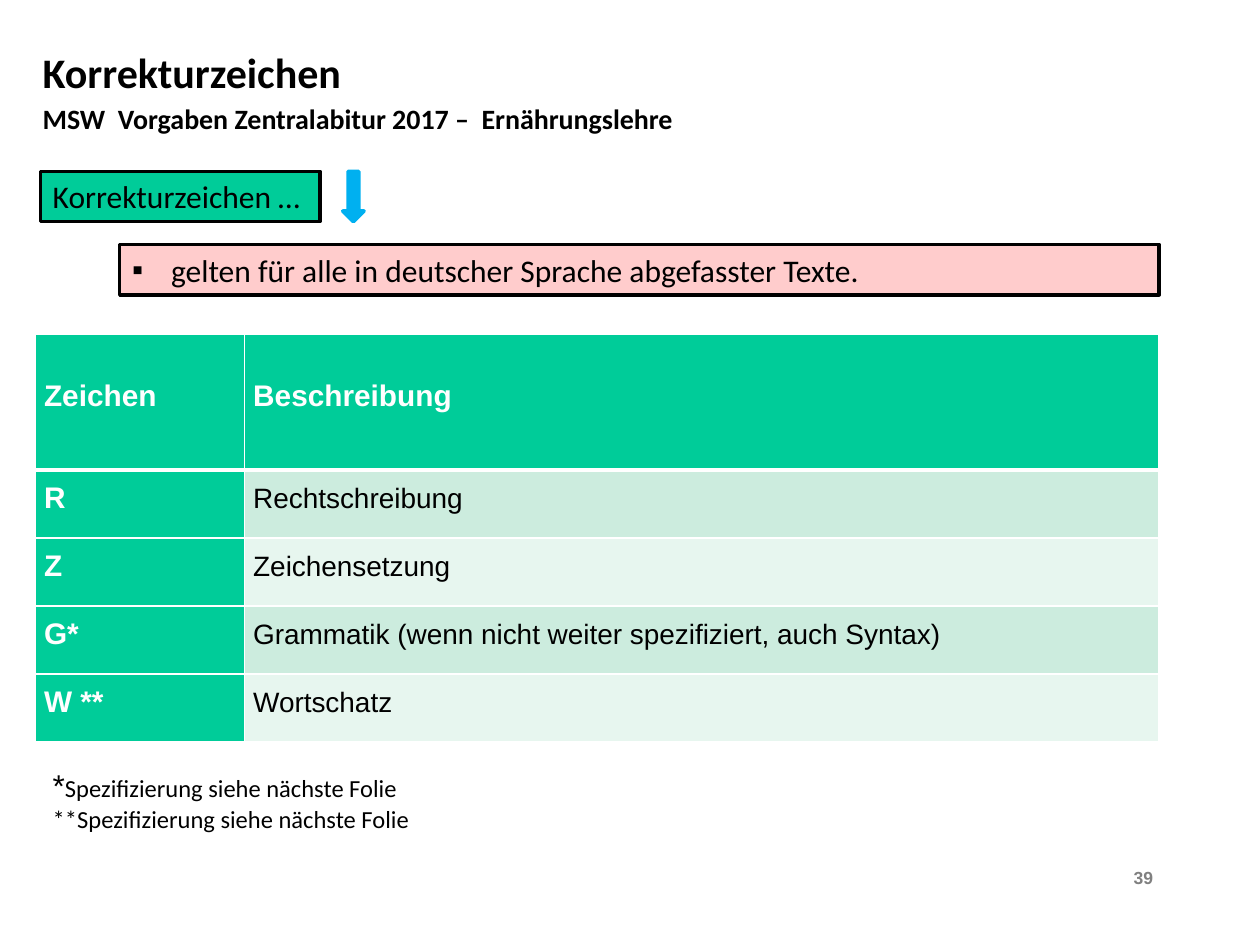
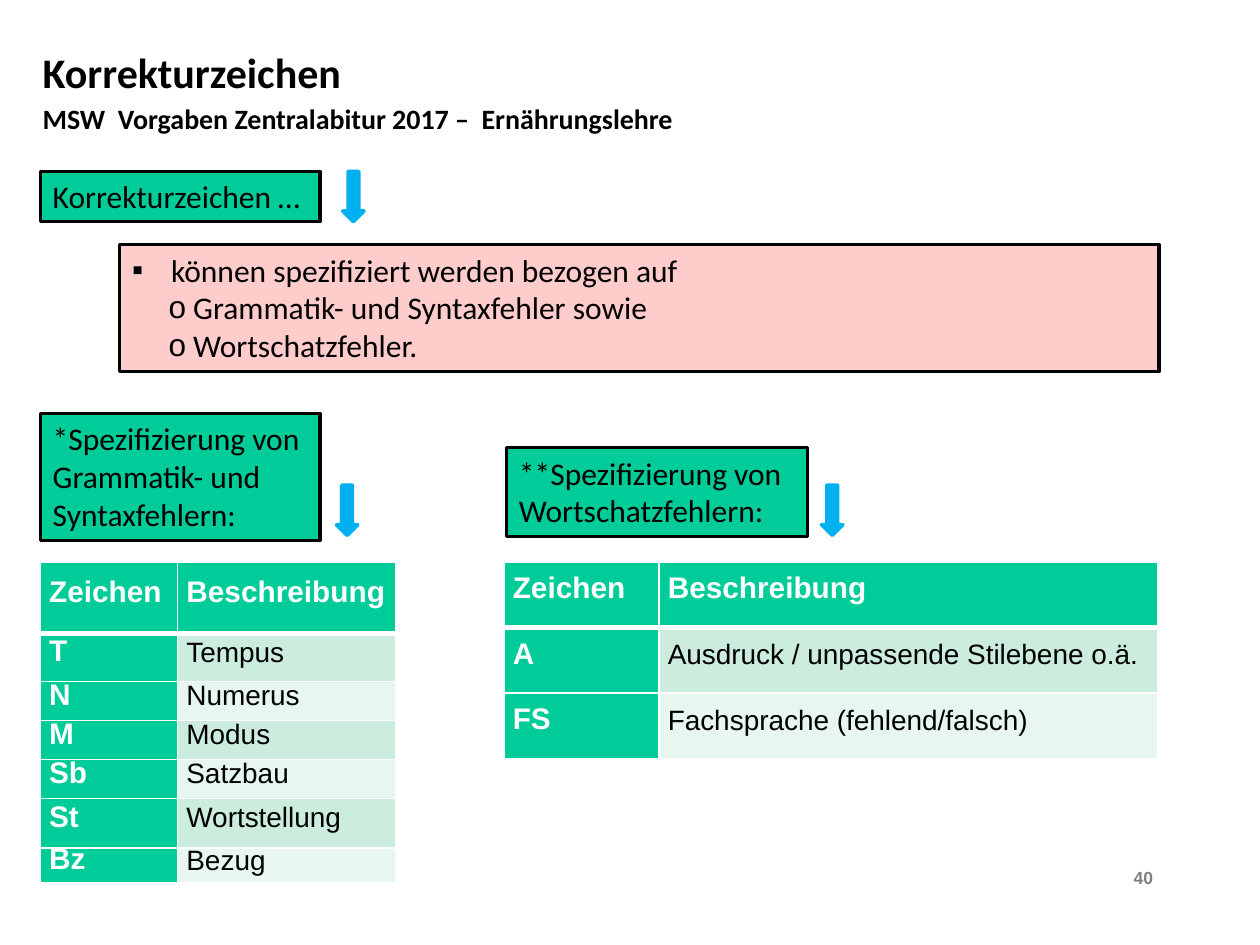
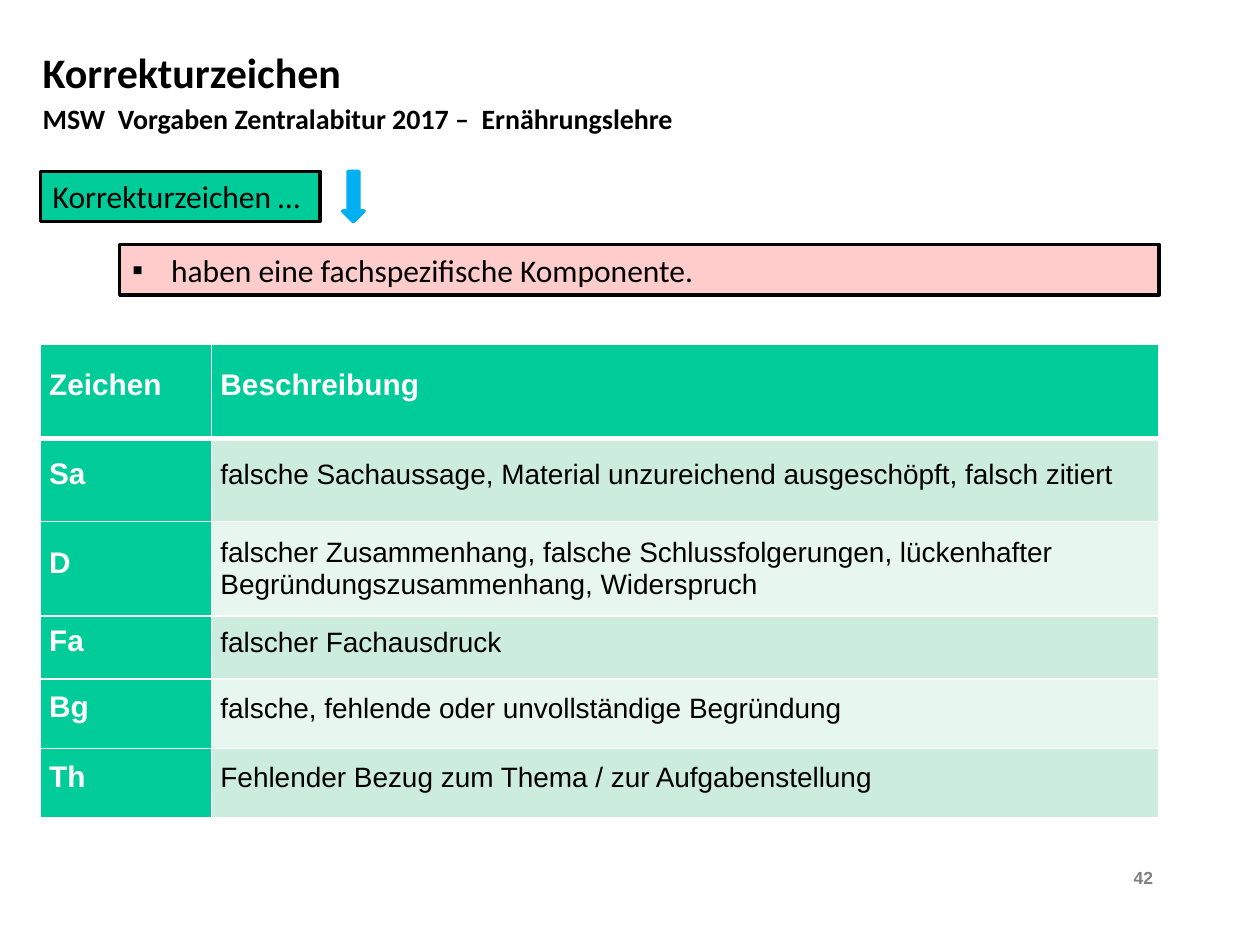
from dataclasses import dataclass, field

from lxml.etree import SubElement
from pptx import Presentation
from pptx.dml.color import RGBColor
from pptx.enum.shapes import MSO_SHAPE
from pptx.enum.text import MSO_ANCHOR, MSO_AUTO_SIZE, PP_ALIGN
from pptx.oxml.ns import qn
from pptx.util import Inches, Pt


@dataclass
class Theme:
    green: str = "00CC99"
    pink: str = "FFCCCC"
    blue: str = "00B0F0"
    black: str = "000000"
    white: str = "FFFFFF"
    bands: tuple = ("CCECDE", "E7F6EF")
    outline: float = 2
    cell_line: int = 1
    header_line: int = 3
    # Text styles: font, size, bold, colour
    styles: dict = field(default_factory=lambda: {
        "title": ("Calibri", 24, True, "000000"),
        "subtitle": ("Calibri", 16, True, "000000"),
        "body": ("Calibri", 18, False, "000000"),
        "note": ("Calibri", 14, False, "000000"),
        "star": ("Arial", 18, False, "000000"),
        "number": ("Arial", 10, True, "808080"),
        "sign": ("Arial", 17, True, "FFFFFF"),
        "meaning": ("Arial", 16, False, "000000"),
    })


theme = Theme()
presentation = Presentation()
presentation.slide_width, presentation.slide_height = Inches(10), Inches(7.5)

# Grid of 100 columns and 75 rows
COLUMN = presentation.slide_width / 100
ROW = presentation.slide_height / 75
LEFT, RIGHT = 3.2, 92
LABEL_WIDTH, LINE_HEIGHT = 22.2, 4
ARROW_WIDTH = 1.7


def write(paragraph, runs):
    for text, style in runs:
        run = paragraph.add_run()
        run.text = text
        name, size, bold, colour = theme.styles[style]
        for key, value in {"name": name, "size": Pt(size), "bold": bold}.items():
            setattr(run.font, key, value)
        run.font.color.rgb = RGBColor.from_string(colour)


def add_box(slide, at, paragraphs, fill=None, line=theme.black, preset=MSO_SHAPE.RECTANGLE,
            bullets=(), align=PP_ALIGN.LEFT, anchor=MSO_ANCHOR.TOP):
    left, top, width, height = at
    place = [round(left * COLUMN), round(top * ROW), round(width * COLUMN), round(height * ROW)]
    if fill:
        shape = slide.shapes.add_shape(preset, *place)
        shape.shadow.inherit = False
        shape.fill.solid()
        shape.fill.fore_color.rgb = RGBColor.from_string(fill)
        shape.line.color.rgb = RGBColor.from_string(line)
        shape.line.width = Pt(theme.outline)
    else:
        shape = slide.shapes.add_textbox(*place)
    frame = shape.text_frame
    frame_format = {"word_wrap": True, "vertical_anchor": anchor, "auto_size": MSO_AUTO_SIZE.NONE}
    for key, value in frame_format.items():
        setattr(frame, key, value)
    for index, runs in enumerate(paragraphs):
        paragraph = frame.add_paragraph() if index else frame.paragraphs[0]
        paragraph.alignment = align
        if bullets:
            character, indent = bullets[min(index, len(bullets) - 1)]
            properties = paragraph._p.get_or_add_pPr()
            properties.set("marL", str(Inches(0.31)))
            properties.set("indent", str(Inches(indent)))
            SubElement(properties, qn("a:buFont")).set("typeface", "Arial")
            SubElement(properties, qn("a:buChar")).set("char", character)
        write(paragraph, runs)


# Tables: left, top, column widths, row heights, entries
signs = (2.8, 26.5, (16.6, 72.6), (10.8, 5.4, 5.4, 5.4, 5.4), [
    ("R", "Rechtschreibung"),
    ("Z", "Zeichensetzung"),
    ("G*", "Grammatik (wenn nicht weiter spezifiziert, auch Syntax)"),
    ("W **", "Wortschatz"),
])
grammar = (LEFT, 44.6, (10.9, 17.3), (5.7, 3.8, 3.1, 3.1, 3.1, 3.9, 2.8), [
    ("T", "Tempus"),
    ("N", "Numerus"),
    ("M", "Modus"),
    ("Sb", "Satzbau"),
    ("St", "Wortstellung"),
    ("Bz", "Bezug"),
])
vocabulary = (40, 44.6, (12.3, 39.6), (5.2, 5.2, 5.2), [
    ("A", "Ausdruck / unpassende Stilebene o.ä."),
    ("FS", "Fachsprache (fehlend/falsch)"),
])
subject = (LEFT, 27.3, (13.6, 75.2), (7.5, 6.6, 7.5, 5, 5.5, 5.5), [
    ("Sa", "falsche Sachaussage, Material unzureichend ausgeschöpft, falsch zitiert"),
    ("D", "falscher Zusammenhang, falsche Schlussfolgerungen, lückenhafter "
          "Begründungszusammenhang, Widerspruch"),
    ("Fa", "falscher Fachausdruck"),
    ("Bg", "falsche, fehlende oder unvollständige Begründung"),
    ("Th", "Fehlender Bezug zum Thema / zur Aufgabenstellung"),
])

# Labels: box, text, left and top of the arrow beside it
opening = ((LEFT, 13.6, LABEL_WIDTH, LINE_HEIGHT), "Korrekturzeichen …", (27.2, 13.6))
grammar_label = ((LEFT, 32.8, LABEL_WIDTH, 10.1),
                 "*Spezifizierung von Grammatik- und Syntaxfehlern:", (26.7, 38.5))
vocabulary_label = ((40.2, 35.5, 23.9, 7.1),
                    "**Spezifizierung von Wortschatzfehlern:", (65.2, 38.5))

# Slides: number, claims, height of the claim box, labels, tables, footnotes
slides = [
    ("39", ["gelten für alle in deutscher Sprache abgefasster Texte."], LINE_HEIGHT,
     [opening], [signs],
     [[("*", "star"), ("Spezifizierung siehe nächste Folie", "note")],
      [("**Spezifizierung siehe nächste Folie", "note")]]),
    ("40", ["können spezifiziert werden bezogen auf",
            " Grammatik- und Syntaxfehler sowie", " Wortschatzfehler."], 10.1,
     [opening, grammar_label, vocabulary_label], [grammar, vocabulary], []),
    ("42", ["haben eine fachspezifische Komponente."], LINE_HEIGHT,
     [opening], [subject], []),
]

for number, claims, claim_height, labels, tables, footnotes in slides:
    slide = presentation.slides.add_slide(presentation.slide_layouts[6])

    # Page number, title and subtitle
    add_box(slide, (79.2, 68.3, 13.3, 4.2), [[(number, "number")]], align=PP_ALIGN.RIGHT)
    add_box(slide, (2.4, 1.3, 60.6, 8.8), [[("Korrekturzeichen", "title")]],
            anchor=MSO_ANCHOR.MIDDLE)
    add_box(slide, (2.4, 7.6, 60, 3.7),
            [[("MSW  Vorgaben Zentralabitur 2017 –  Ernährungslehre", "subtitle")]])

    # Labels with their arrows
    for box, text, arrow in labels:
        add_box(slide, box, [[(text, "body")]], theme.green)
        add_box(slide, (*arrow, ARROW_WIDTH, LINE_HEIGHT), [], theme.blue, theme.blue,
                MSO_SHAPE.DOWN_ARROW)

    # Claim
    add_box(slide, (9.5, 19.4, RIGHT - 9.5, claim_height),
            [[(claim, "body")] for claim in claims], theme.pink,
            bullets=(("▪", -0.31), ("o", -0.02)))

    # Tables
    for left, top, widths, heights, entries in tables:
        table = slide.shapes.add_table(
            len(heights), len(widths), round(left * COLUMN), round(top * ROW),
            round(sum(widths) * COLUMN), round(sum(heights) * ROW)).table
        for column, width in zip(table.columns, widths):
            column.width = round(width * COLUMN)
        for row, height in zip(table.rows, heights):
            row.height = round(height * ROW)
        for row_index, entry in enumerate([("Zeichen", "Beschreibung"), *entries]):
            for column_index, text in enumerate(entry):
                cell = table.cell(row_index, column_index)
                cell_format = {"margin_left": Inches(0.07), "margin_right": Inches(0.07),
                               "margin_top": 0, "margin_bottom": 0,
                               "vertical_anchor": MSO_ANCHOR.MIDDLE}
                for key, value in cell_format.items():
                    setattr(cell, key, value)
                for side in ("L", "R", "T", "B"):
                    below_header = (row_index, side) in ((0, "B"), (1, "T"))
                    width = theme.header_line if below_header else theme.cell_line
                    border = SubElement(cell._tc.get_or_add_tcPr(), qn(f"a:ln{side}"),
                                        w=str(Pt(width)))
                    border_fill = SubElement(border, qn("a:solidFill"))
                    SubElement(border_fill, qn("a:srgbClr"), val=theme.white)
                is_sign = row_index == 0 or column_index == 0
                colour = theme.green if is_sign else theme.bands[(row_index - 1) % 2]
                cell.fill.solid()
                cell.fill.fore_color.rgb = RGBColor.from_string(colour)
                paragraph = cell.text_frame.paragraphs[0]
                if not text.startswith("falscher Zusammenhang"):
                    paragraph.line_spacing = Pt(12)
                write(paragraph, [(text, "sign" if is_sign else "meaning")])

    # Footnotes
    if footnotes:
        add_box(slide, (LEFT, 60.3, 66.5, 6.4), footnotes)

presentation.save("out.pptx")
